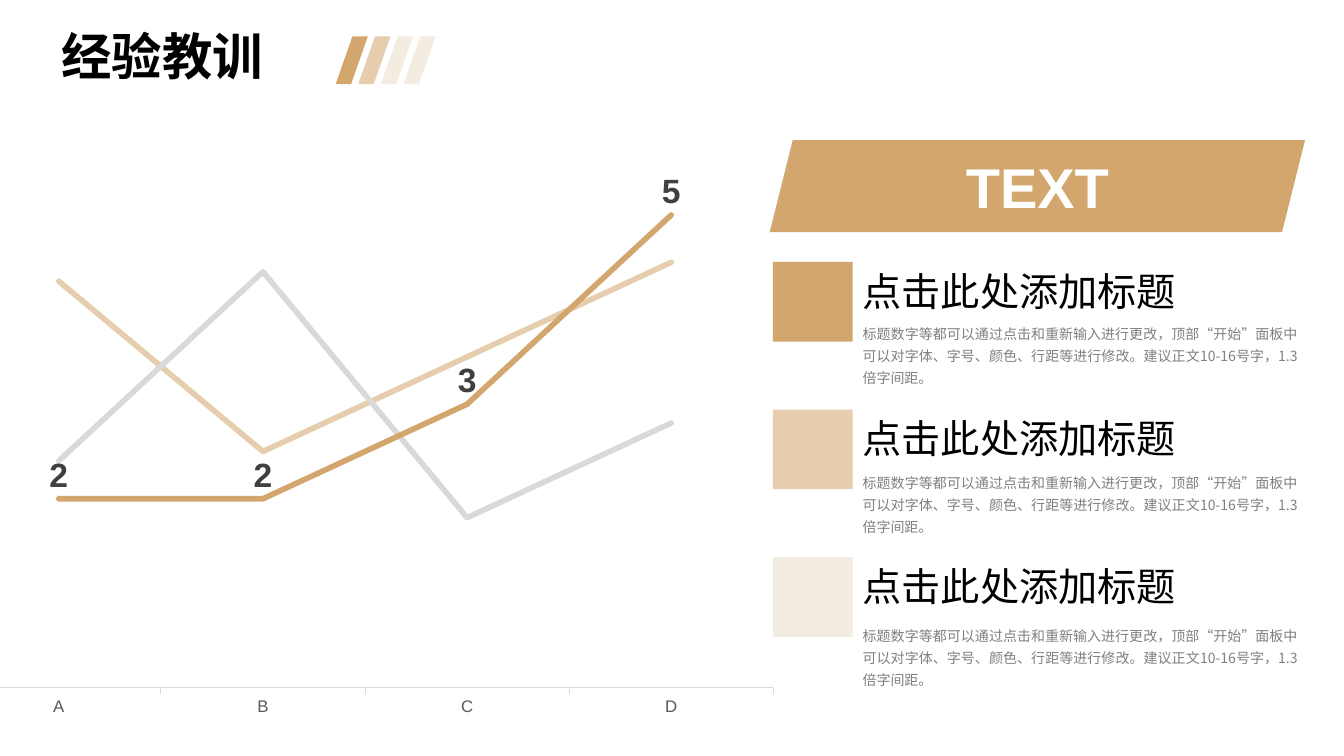
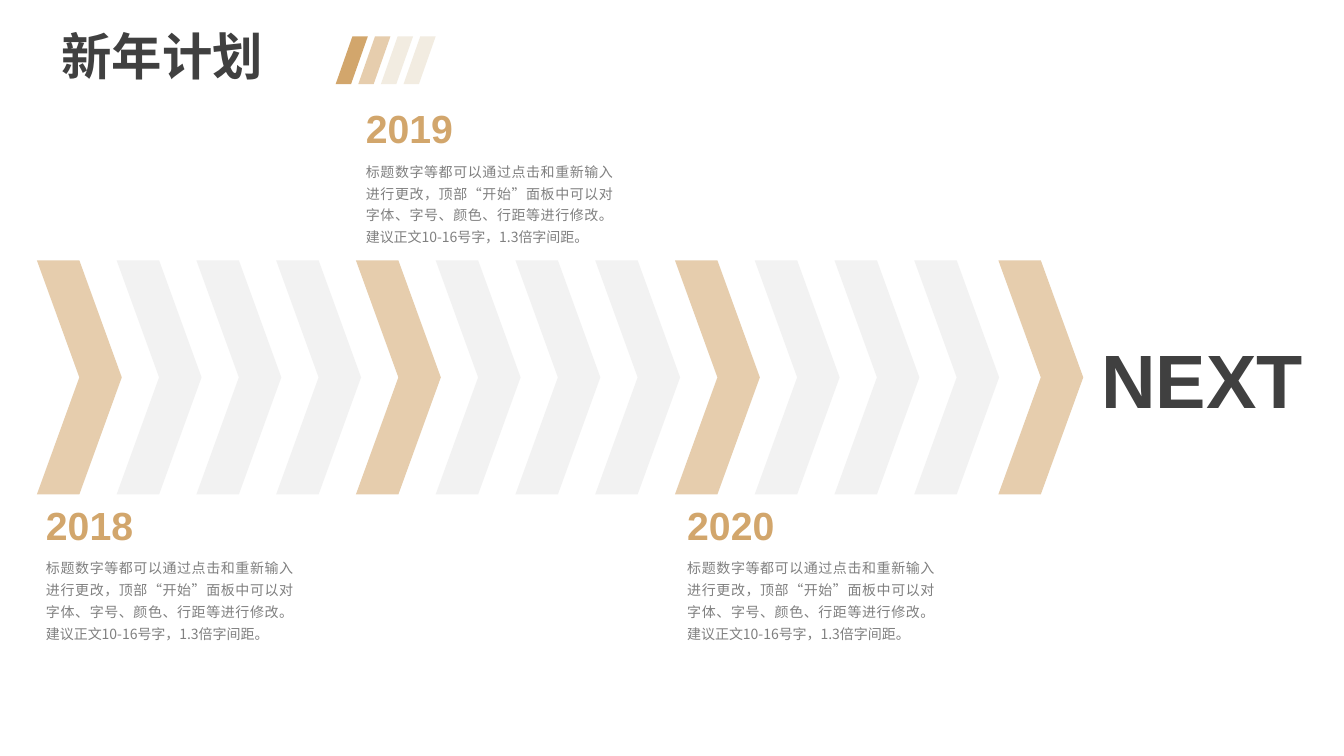
import pptx
import pptx.chart.data
import pptx.dml.color
import pptx.enum.chart
import pptx.enum.shapes
import pptx.enum.text
import pptx.oxml
import pptx.oxml.ns
import pptx.util

Cm = pptx.util.Cm
Pt = pptx.util.Pt
RGBColor = pptx.dml.color.RGBColor
SHAPE = pptx.enum.shapes.MSO_SHAPE
ALIGN = pptx.enum.text.PP_ALIGN
FIT = pptx.enum.text.MSO_AUTO_SIZE
qn = pptx.oxml.ns.qn

# Shared colours and text styles
GOLD = RGBColor(0xD2, 0xA6, 0x6C)
SAND = RGBColor(0xE6, 0xCD, 0xAD)
CREAM = RGBColor(0xF2, 0xEC, 0xE1)
PALE = RGBColor(0xF2, 0xF2, 0xF2)
SILVER = RGBColor(0xD9, 0xD9, 0xD9)
GREY = RGBColor(0x80, 0x80, 0x80)
SLATE = RGBColor(0x59, 0x59, 0x59)
DARK = RGBColor(0x40, 0x40, 0x40)
BLACK = RGBColor(0, 0, 0)
WHITE = RGBColor(0xFF, 0xFF, 0xFF)

LATIN = "Arial"
HAN = "Noto Sans CJK SC"
TITLE = {"size": Pt(36), "name": LATIN, "bold": True}
BANNER = {"size": Pt(40), "name": LATIN, "bold": True}
HEAD = {"size": Pt(28), "name": LATIN}
YEAR = {"size": Pt(28), "name": LATIN, "bold": True}
NEXT = {"size": Pt(54), "name": LATIN, "bold": True}
BODY = {"size": Pt(10), "name": HAN}
LABEL = {"size": Pt(24), "name": LATIN, "bold": True}
TICK = {"size": Pt(12), "name": LATIN}

TITLE_PARA = {"line_spacing": 0.9, "space_before": Pt(10)}
BODY_PARA = {"alignment": ALIGN.JUSTIFY, "line_spacing": 1.3}

BLURB = ("标题数字等都可以通过点击和重新输入进行更改，顶部“开始”面板中可以对字体、"
         "字号、颜色、行距等进行修改。建议正文10-16号字，1.3倍字间距。")


def apply(item, style):
    for key, value in style.items():
        setattr(item, key, value)


def paint(font, style, color):
    apply(font, style)
    font.color.rgb = color


def write(frame, text, style, color, para):
    line = frame.paragraphs[0]
    apply(line, para)
    run = line.add_run()
    run.text = text
    paint(run.font, style, color)
    east = pptx.oxml.parse_xml(
        f'<a:ea {pptx.oxml.ns.nsdecls("a")} typeface="{HAN}"/>')
    run.font._element.find(qn("a:latin")).addnext(east)


def add_text(slide, box, text, style, color, para=None, wrap=False):
    frame = slide.shapes.add_textbox(*map(Cm, box)).text_frame
    apply(frame, {"word_wrap": wrap, "auto_size": FIT.SHAPE_TO_FIT_TEXT})
    write(frame, text, style, color, para or {})


def add_block(slide, kind, box, color):
    shape = slide.shapes.add_shape(kind, *map(Cm, box))
    shape.shadow.inherit = False
    shape.fill.solid()
    shape.fill.fore_color.rgb = color
    shape.line.fill.background()
    return shape


def add_blurb(slide, left, top, width, height):
    add_text(slide, (left, top, width, height), BLURB, BODY, GREY,
             BODY_PARA, wrap=True)


def add_header(slide, title, color):
    # Title and its four slanted bars
    for i, tone in enumerate((GOLD, SAND, CREAM, CREAM)):
        bar = add_block(slide, SHAPE.PARALLELOGRAM,
                        (8.46 + 0.57 * i, 0.92, 0.81, 1.2), tone)
        bar.adjustments[0] = 0.52
    add_text(slide, (1.3, 0.69, 7.47, 1.65), title, TITLE, color,
             TITLE_PARA, wrap=True)


def set_layout(chart, x, y, w, h):
    # Fixed inner plot area, as shares of the chart
    spots = "".join(f'<c:{key} val="{value}"/>' for key, value in (
        ("layoutTarget", "inner"), ("xMode", "edge"), ("yMode", "edge"),
        ("x", x), ("y", y), ("w", w), ("h", h)))
    layout = pptx.oxml.parse_xml(
        f'<c:layout {pptx.oxml.ns.nsdecls("c")}>'
        f'<c:manualLayout>{spots}</c:manualLayout></c:layout>')
    area = chart._chartSpace.chart.plotArea
    old = area.find(qn("c:layout"))
    if old is not None:
        area.remove(old)
    area.insert(0, layout)


def add_trend(slide, box):
    data = pptx.chart.data.CategoryChartData(number_format="General")
    data.categories = "ABCD"
    rows = ((SAND, (4.3, 2.5, 3.5, 4.5)), (SILVER, (2.4, 4.4, 1.8, 2.8)),
            (GOLD, (2, 2, 3, 5)))
    for i, (_, values) in enumerate(rows, 1):
        data.add_series(f"Series {i}", values)
    chart = slide.shapes.add_chart(
        pptx.enum.chart.XL_CHART_TYPE.LINE, *map(Cm, box), data).chart
    apply(chart, {"has_legend": False, "has_title": False})
    paint(chart.font, {"size": Pt(10), "name": LATIN}, BLACK)
    set_layout(chart, 0.02, 0.02, 0.96, 0.91)

    # Axes
    marks = pptx.enum.chart.XL_TICK_MARK
    base = chart.category_axis
    apply(base, {"major_tick_mark": marks.OUTSIDE,
                 "minor_tick_mark": marks.NONE,
                 "has_major_gridlines": False})
    paint(base.tick_labels.font, TICK, SLATE)
    base.format.line.color.rgb = SILVER
    base.format.line.width = Pt(0.75)
    apply(chart.value_axis, {"visible": False, "has_major_gridlines": False,
                             "minimum_scale": 0, "maximum_scale": 6})

    # Lines with round ends
    plot = chart.plots[0]
    plot.vary_by_categories = False
    for series, (tone, _) in zip(plot.series, rows):
        series.smooth = False
        series.marker.style = pptx.enum.chart.XL_MARKER_STYLE.NONE
        line = series.format.line
        line.color.rgb = tone
        line.width = Pt(4)
        series._element.spPr.find(qn("a:ln")).set("cap", "rnd")

    # Values on the last line
    labels = plot.series[-1].data_labels
    apply(labels, {"show_value": True,
                   "position": pptx.enum.chart.XL_LABEL_POSITION.ABOVE})
    paint(labels.font, LABEL, DARK)


def add_point(slide, left, top, color, drop):
    side = 2.01
    add_block(slide, SHAPE.RECTANGLE, (left, top, side, side), color)
    add_text(slide, (left + side, top, 8.48, 1.45), "点击此处添加标题",
             HEAD, BLACK)
    add_blurb(slide, left + side, top + drop, 11.46, 1.93)


def add_panel(slide, left, top):
    # Banner above three points
    banner = add_block(slide, SHAPE.PARALLELOGRAM,
                       (left, top, 13.49, 2.32), GOLD)
    banner.text_frame.vertical_anchor = pptx.enum.text.MSO_ANCHOR.MIDDLE
    write(banner.text_frame, "TEXT", BANNER, WHITE,
          {"alignment": ALIGN.CENTER})
    points = ((GOLD, 1.35), (SAND, 1.38), (CREAM, 1.52))
    for i, (tone, drop) in enumerate(points):
        add_point(slide, left + 0.08, top + 3.07 + 3.72 * i, tone, drop)


def add_arrows(slide, left, top):
    # Every fourth chevron marks a year; the last stands slightly apart
    count, pitch, gap = 13, 2.01, 0.11
    for i in range(count):
        shift = gap if i == count - 1 else 0
        add_block(slide, SHAPE.CHEVRON,
                  (left + pitch * i + shift, top, 2.14, 5.9),
                  PALE if i % 4 else SAND)


def add_year(slide, left, top, year):
    add_text(slide, (left, top, 2.74, 1.45), year, YEAR, GOLD)
    add_blurb(slide, left, top + 1.35, 6.73, 2.49)


def build_lessons(slide):
    add_header(slide, "经验教训", BLACK)
    add_trend(slide, (-1.52, 2.72, 21.44, 15.72))
    add_panel(slide, 19.4, 3.53)


def build_plan(slide):
    add_header(slide, "新年计划", DARK)
    add_arrows(slide, 0.93, 6.56)
    for left, top, year in ((0.91, 12.5, "2018"), (17.07, 12.5, "2020"),
                            (8.97, 2.51, "2019")):
        add_year(slide, left, top, year)
    add_text(slide, (27.5, 8.26, 5.64, 2.57), "NEXT", NEXT, DARK,
             {"alignment": ALIGN.JUSTIFY})


def main():
    deck = pptx.Presentation()
    apply(deck, {"slide_width": Cm(33.87), "slide_height": Cm(19.05)})
    for build in (build_lessons, build_plan):
        build(deck.slides.add_slide(deck.slide_layouts[6]))
    deck.save("out.pptx")


if __name__ == "__main__":
    main()
